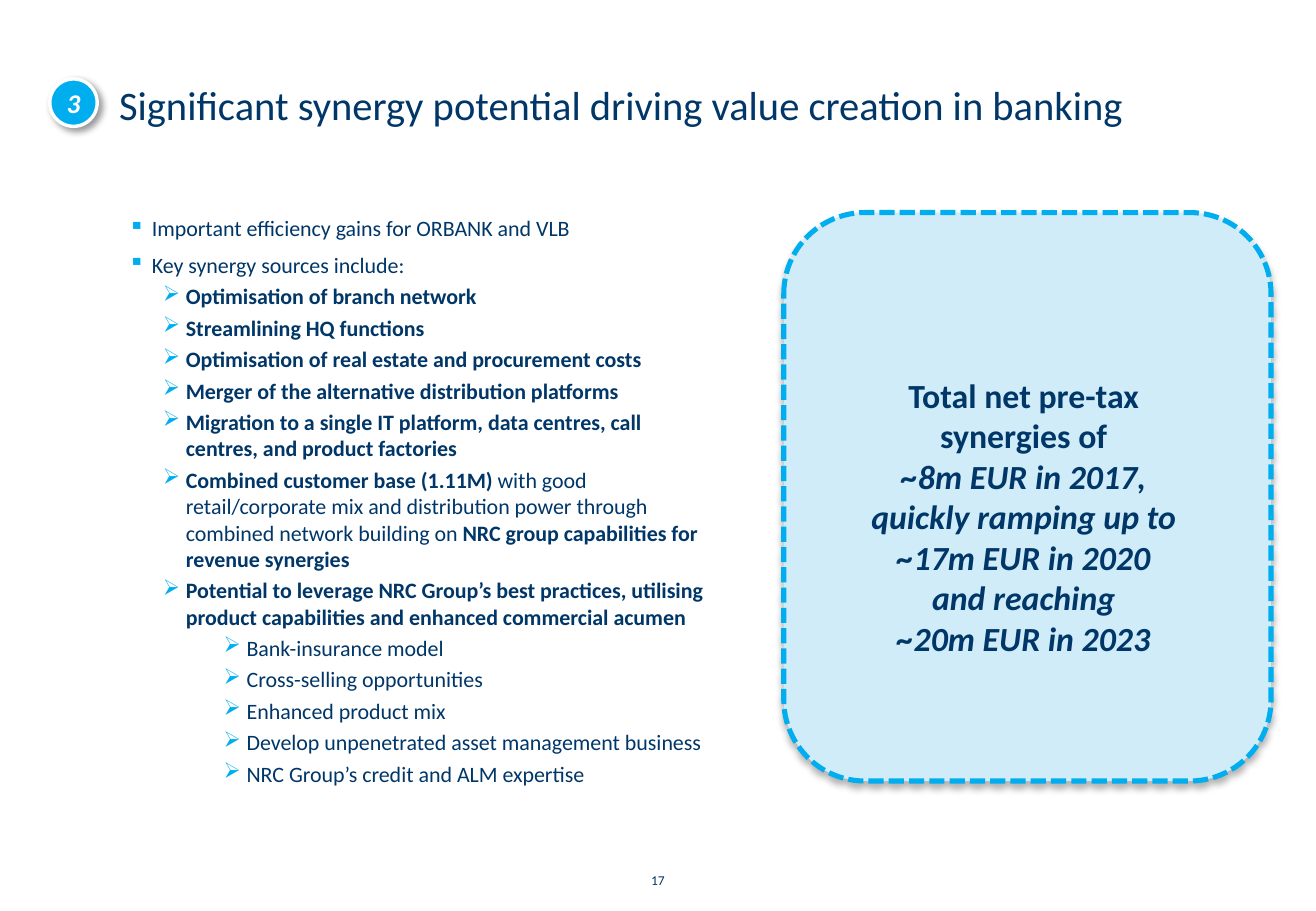
from lxml import etree
from pptx import Presentation
from pptx.dml.color import RGBColor
from pptx.enum import dml, shapes, text
from pptx.oxml import ns
from pptx.util import Inches, Pt

NAVY, CYAN, PALE, WHITE = "003768", "00AEEF", "CFECF8", "FFFFFF"
TITLE = "Significant synergy potential driving value creation in banking"
BADGE = "3"
PAGE = "17"
POINTS = [
    (0, [("Important efficiency gains for ORBANK and VLB", False)]),
    (0, [("Key synergy sources include:", False)]),
    (1, [("Optimisation of branch network", True)]),
    (1, [("Streamlining HQ functions", True)]),
    (1, [("Optimisation of real estate and procurement costs", True)]),
    (1, [("Merger of the alternative distribution platforms", True)]),
    (1, [("Migration to a single IT platform, data centres, call centres, and product factories", True)]),
    (1, [("Combined customer base (1.11M)", True),
         (" with good retail/corporate mix and distribution power through combined network building on ", False),
         ("NRC group capabilities for revenue synergies", True)]),
    (1, [("Potential to leverage NRC Group’s best practices, utilising product capabilities "
          "and enhanced commercial acumen", True)]),
    (2, [("Bank-insurance model", False)]),
    (2, [("Cross-selling opportunities", False)]),
    (2, [("Enhanced product mix", False)]),
    (2, [("Develop unpenetrated asset management business", False)]),
    (2, [("NRC Group’s credit and ALM expertise", False)]),
]
LEVELS = [("▪", 0.19, 6), ("➢", 0.47, 3), ("➢", 0.97, 3)]
HANG = 0.19
TARGETS = [
    ("Total net pre-tax synergies of", False),
    ("~8m EUR in 2017, quickly ramping up to ~17m EUR in 2020", True),
    ("and reaching", True),
    ("~20m EUR in 2023", True),
]


def rgb(value):
    return RGBColor.from_string(value)


def write(paragraph, words, size, color=NAVY, bold=False, italic=False, align=None):
    if align is not None:
        paragraph.alignment = align
    run = paragraph.add_run()
    run.text = words
    font = run.font
    font.name, font.size, font.bold, font.italic = "Calibri", Pt(size), bold, italic
    font.color.rgb = rgb(color)


def set_frame(box, insets, anchor):
    frame = box.text_frame
    frame.word_wrap = True
    frame.auto_size = text.MSO_AUTO_SIZE.NONE
    frame.vertical_anchor = anchor
    frame.margin_left, frame.margin_top, frame.margin_right, frame.margin_bottom = map(Inches, insets)
    return frame


def paragraph_at(frame, index):
    return frame.add_paragraph() if index else frame.paragraphs[0]


def add_panel(kind, place, fill, line, width, shadow_alpha, shadow_angle):
    panel = slide.shapes.add_shape(kind, *map(Inches, place))
    panel.fill.solid()
    panel.fill.fore_color.rgb = rgb(fill)
    panel.line.color.rgb = rgb(line)
    panel.line.width = Pt(width)
    panel.shadow.inherit = False
    effects = panel._element.spPr.find(ns.qn("a:effectLst"))
    shadow = etree.SubElement(effects, ns.qn("a:outerShdw"), blurRad=str(Pt(4)), dist=str(Pt(3)),
                              dir=str(shadow_angle * 60000), algn="ctr", rotWithShape="0")
    tint = etree.SubElement(shadow, ns.qn("a:srgbClr"), val="000000")
    etree.SubElement(tint, ns.qn("a:alpha"), val=str(shadow_alpha * 1000))
    return panel


def add_bullet(paragraph, level):
    mark, margin, before = LEVELS[level]
    props = paragraph._p.get_or_add_pPr()
    props.set("marL", str(Inches(margin)))
    props.set("indent", str(-Inches(HANG)))
    tint = etree.SubElement(props, ns.qn("a:buClr"))
    etree.SubElement(tint, ns.qn("a:srgbClr"), val=CYAN)
    etree.SubElement(props, ns.qn("a:buChar"), char=mark)
    return before


prs = Presentation()
prs.slide_width, prs.slide_height = Inches(10.83), Inches(7.5)
slide = prs.slides.add_slide(prs.slide_layouts[5])
CENTER, MIDDLE = text.PP_ALIGN.CENTER, text.MSO_ANCHOR.MIDDLE

title = slide.shapes.title
title.left, title.top, title.width, title.height = map(Inches, (0.98, 0, 9.85, 1.06))
write(set_frame(title, (0, 0, 0, 0), text.MSO_ANCHOR.BOTTOM).paragraphs[0], TITLE, 24,
      align=text.PP_ALIGN.LEFT)

badge = add_panel(shapes.MSO_SHAPE.OVAL, (0.41, 0.65, 0.39, 0.39), CYAN, WHITE, 2, 40, 45)
write(set_frame(badge, (0, 0.05, 0, 0.05), MIDDLE).paragraphs[0], BADGE, 16, WHITE, True, True, CENTER)

targets = add_panel(shapes.MSO_SHAPE.ROUNDED_RECTANGLE, (6.45, 1.75, 4.01, 4.68), PALE, CYAN, 3, 29, 90)
targets.line.dash_style = dml.MSO_LINE.SQUARE_DOT
targets_frame = set_frame(targets, (0.43, 0.32, 0.49, 0), MIDDLE)
for index, (words, italic) in enumerate(TARGETS):
    write(paragraph_at(targets_frame, index), words, 20, bold=True, italic=italic, align=CENTER)

points = slide.shapes.add_textbox(*map(Inches, (0.98, 1.69, 4.93, 4.85)))
points_frame = set_frame(points, (0.08, 0.08, 0.04, 0), text.MSO_ANCHOR.TOP)
for index, (level, pieces) in enumerate(POINTS):
    point = paragraph_at(points_frame, index)
    before = add_bullet(point, level)
    point.space_before = Pt(before if index else 0)
    for words, bold in pieces:
        write(point, words, 13, bold=bold)

page = slide.shapes.add_textbox(*map(Inches, (5.16, 7.13, 0.51, 0.24)))
write(set_frame(page, (0.1, 0.05, 0.1, 0.05), text.MSO_ANCHOR.TOP).paragraphs[0], PAGE, 8, align=CENTER)

prs.save("out.pptx")
